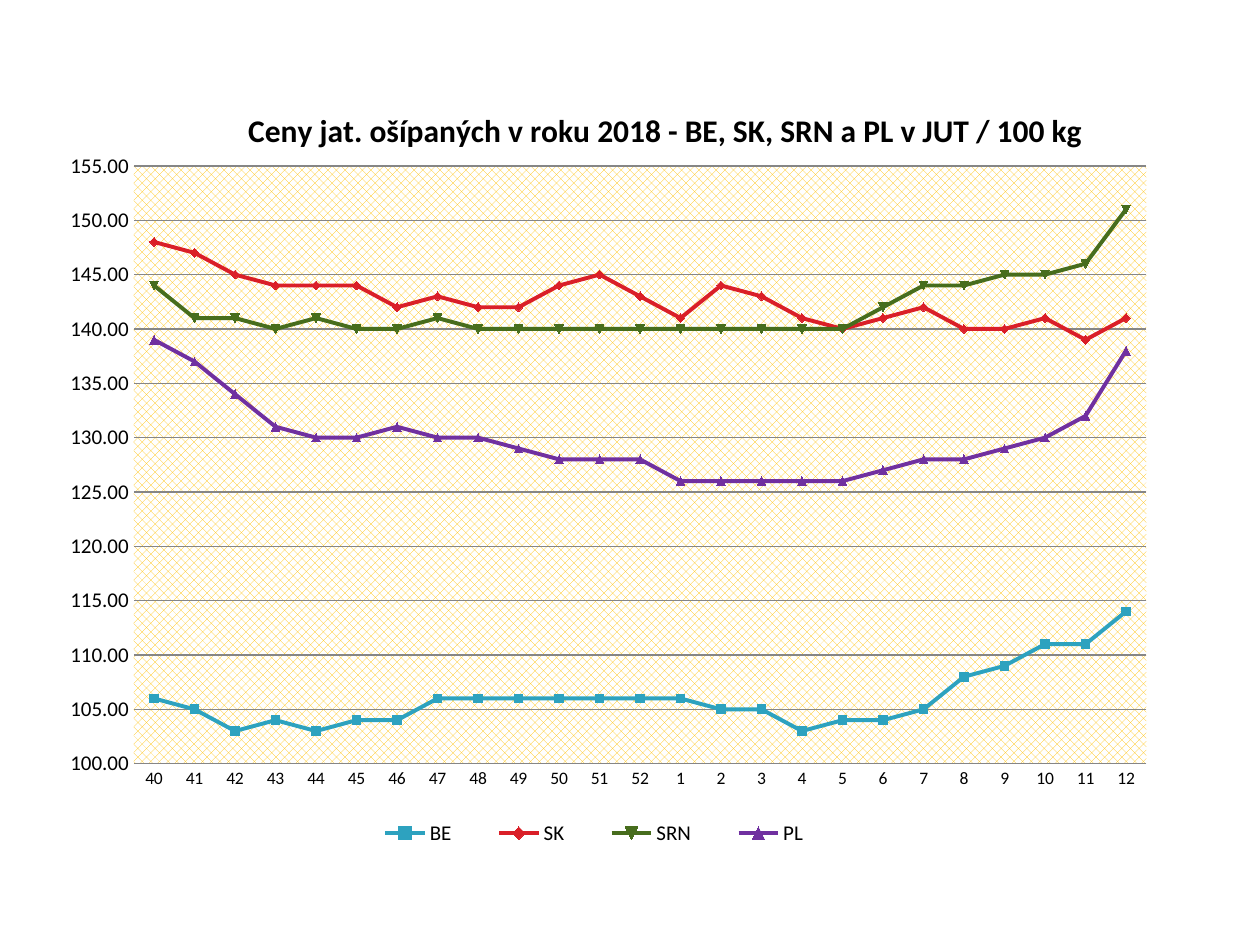
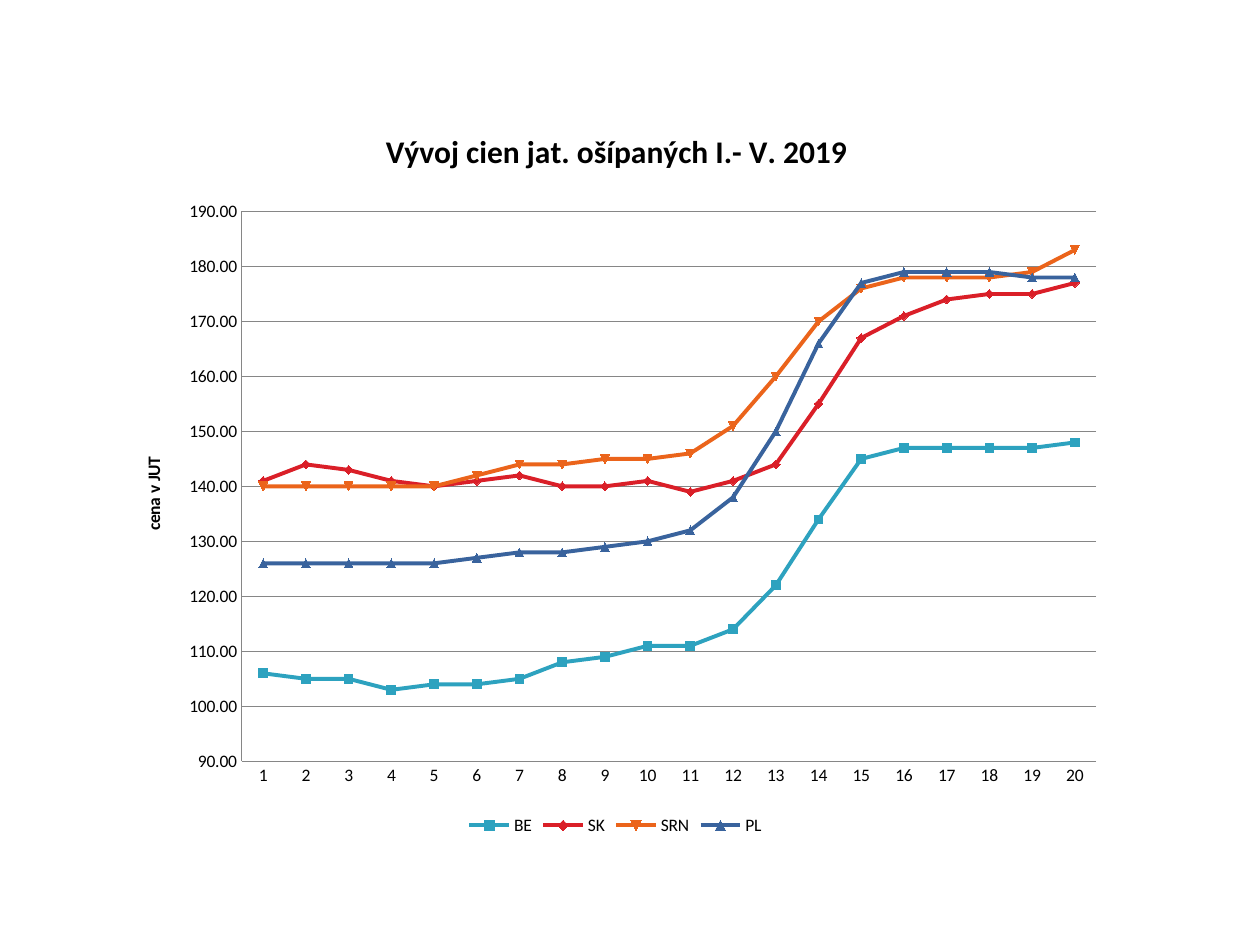
from dataclasses import dataclass

from pptx import Presentation
from pptx.chart.data import CategoryChartData
from pptx.dml.color import RGBColor
from pptx.enum.chart import XL_CHART_TYPE, XL_LEGEND_POSITION, XL_TICK_MARK
from pptx.oxml import parse_xml
from pptx.oxml.ns import nsdecls, qn
from pptx.util import Inches, Pt


@dataclass(frozen=True)
class Theme:
    """Colours, font and type sizes shared by both slides."""

    font: str = "Calibri"
    text: str = "000000"
    grid: str = "868686"
    teal: str = "2DA2BF"
    red: str = "DA1F28"
    green: str = "476D1D"
    purple: str = "7030A0"
    orange: str = "EB641B"
    blue: str = "39639D"
    hatch: str = "FFC000"
    paper: str = "FFFFFF"
    title_size: int = 18
    large_size: int = 12
    base_size: int = 10
    line_width: float = 2.25
    grid_width: float = 0.75
    marker_size: int = 5


THEME = Theme()

AUTUMN_WEEKS = range(40, 53)
SPRING_WEEKS = range(1, 13)
LATE_WEEKS = range(13, 21)

AUTUMN_PRICES = {
    "BE": [106, 105, 103, 104, 103, 104, 104, 106, 106, 106, 106, 106, 106],
    "SK": [148, 147, 145, 144, 144, 144, 142, 143, 142, 142, 144, 145, 143],
    "SRN": [144, 141, 141, 140, 141, 140, 140, 141, 140, 140, 140, 140, 140],
    "PL": [139, 137, 134, 131, 130, 130, 131, 130, 130, 129, 128, 128, 128],
}
SPRING_PRICES = {
    "BE": [106, 105, 105, 103, 104, 104, 105, 108, 109, 111, 111, 114],
    "SK": [141, 144, 143, 141, 140, 141, 142, 140, 140, 141, 139, 141],
    "SRN": [140, 140, 140, 140, 140, 142, 144, 144, 145, 145, 146, 151],
    "PL": [126, 126, 126, 126, 126, 127, 128, 128, 129, 130, 132, 138],
}
LATE_PRICES = {
    "BE": [122, 134, 145, 147, 147, 147, 147, 148],
    "SK": [144, 155, 167, 171, 174, 175, 175, 177],
    "SRN": [160, 170, 176, 178, 178, 178, 179, 183],
    "PL": [150, 166, 177, 179, 179, 179, 178, 178],
}


def join_periods(first, second):
    """Join the price lists of two periods country by country."""
    return {country: first[country] + second[country] for country in first}


def place(element, index, **percents):
    """Give a chart part a manual layout in percent of the chart."""
    for layout in element.findall(qn("c:layout")):
        element.remove(layout)
    target = '<c:layoutTarget val="inner"/>' if element.tag == qn("c:plotArea") else ""
    modes = "".join(f'<c:{axis}Mode val="edge"/>' for axis in "xy")
    values = "".join(f'<c:{key} val="{value / 100:.3f}"/>' for key, value in percents.items())
    element.insert(index, parse_xml(
        f'<c:layout {nsdecls("c")}><c:manualLayout>{target}{modes}{values}'
        "</c:manualLayout></c:layout>"))


class PriceDeck:
    """Holds the theme and the current slide and draws price charts."""

    def __init__(self, presentation, theme):
        self.presentation = presentation
        self.theme = theme
        self.slide = None

    def add_slide(self):
        """Start a new blank slide."""
        self.slide = self.presentation.slides.add_slide(self.presentation.slide_layouts[6])

    def style_font(self, font, size, bold=False):
        """Apply the theme font at the given size."""
        font.name = self.theme.font
        font.size = Pt(size)
        font.bold = bold
        font.color.rgb = RGBColor.from_string(self.theme.text)

    def style_line(self, line, color, width):
        """Set the colour and width of a line."""
        line.color.rgb = RGBColor.from_string(color)
        line.width = Pt(width)

    def add_title(self, owner, text, size):
        """Write a bold title on a chart or an axis title."""
        run = owner.text_frame.paragraphs[0].add_run()
        run.text = text
        self.style_font(run.font, size, True)

    def add_line_chart(self, title, title_place, box, weeks, prices, colors, plot, label_size):
        """Add a line chart with title, legend and coloured series."""
        data = CategoryChartData(number_format="#,##0.00")
        data.categories = [str(week) for week in weeks]
        for country, values in prices.items():
            data.add_series(country, values)
        frame = self.slide.shapes.add_chart(
            XL_CHART_TYPE.LINE_MARKERS, *(Inches(length) for length in box), data)
        chart = frame.chart
        self.style_font(chart.font, self.theme.base_size)
        chart.has_title = True
        self.add_title(chart.chart_title, title, self.theme.title_size)
        chart.chart_title.include_in_layout = False
        place(chart.chart_title.element, 1, **title_place)
        chart.has_legend = True
        chart.legend.position = XL_LEGEND_POSITION.BOTTOM
        chart.legend.include_in_layout = False
        self.style_font(chart.legend.font, label_size)
        chart.plots[0].vary_by_categories = False
        for series, color in zip(chart.plots[0].series, colors):
            self.style_series(series, color)
        place(chart.element.find(".//" + qn("c:plotArea")), 0, **plot)
        return chart

    def style_series(self, series, color):
        """Colour the line and the markers of one series."""
        series.smooth = False
        self.style_line(series.format.line, color, self.theme.line_width)
        series.marker.size = self.theme.marker_size
        series.marker.format.fill.solid()
        series.marker.format.fill.fore_color.rgb = RGBColor.from_string(color)
        self.style_line(series.marker.format.line, color, self.theme.grid_width)

    def style_axes(self, chart, minimum, maximum, step, label_size):
        """Set the scale, the grid and the labels of both axes."""
        for axis, size in ((chart.category_axis, self.theme.base_size),
                           (chart.value_axis, label_size)):
            axis.major_tick_mark = axis.minor_tick_mark = XL_TICK_MARK.NONE
            self.style_font(axis.tick_labels.font, size)
            self.style_line(axis.format.line, self.theme.grid, self.theme.grid_width)
        values = chart.value_axis
        values.minimum_scale, values.maximum_scale = minimum, maximum
        values.major_unit = step
        values.has_major_gridlines = True
        self.style_line(values.major_gridlines.format.line, self.theme.grid, self.theme.grid_width)
        values.tick_labels.number_format = "#,##0.00"
        values.tick_labels.number_format_is_linked = False

    def hatch_plot(self, chart):
        """Fill the plot area with the theme pattern."""
        chart.element.find(".//" + qn("c:plotArea")).append(parse_xml(
            f'<c:spPr {nsdecls("c", "a")}><a:pattFill prst="pct50">'
            f'<a:fgClr><a:srgbClr val="{self.theme.hatch}"/></a:fgClr>'
            f'<a:bgClr><a:srgbClr val="{self.theme.paper}"/></a:bgClr>'
            "</a:pattFill></c:spPr>"))


def add_yearly_prices(deck):
    """Build the slide with prices from week 40 to week 12."""
    theme = deck.theme
    deck.add_slide()
    chart = deck.add_line_chart(
        "Ceny jat. ošípaných v roku 2018 - BE, SK, SRN a PL v JUT / 100 kg",
        dict(x=17.7, y=0.9),
        (0.35, 0.76, 8.9, 6.06),
        [*AUTUMN_WEEKS, *SPRING_WEEKS],
        join_periods(AUTUMN_PRICES, SPRING_PRICES),
        (theme.teal, theme.red, theme.green, theme.purple),
        dict(x=8, y=9.2, w=90.3, h=78.3),
        theme.large_size)
    deck.style_axes(chart, 100, 155, 5, theme.large_size)
    chart.value_axis.format.line.fill.background()
    deck.hatch_plot(chart)
    place(chart.element.find(".//" + qn("c:legend")), 1, x=26.8, y=94.1, w=44.5, h=5)


def add_spring_prices(deck):
    """Build the slide with prices from week 1 to week 20."""
    theme = deck.theme
    deck.add_slide()
    chart = deck.add_line_chart(
        "Vývoj cien jat. ošípaných I.- V. 2019",
        dict(x=26.5, y=1.1),
        (0.91, 0.92, 7.95, 5.75),
        [*SPRING_WEEKS, *LATE_WEEKS],
        join_periods(SPRING_PRICES, LATE_PRICES),
        (theme.teal, theme.red, theme.orange, theme.blue),
        dict(x=12.7, y=13.2, w=85.3, h=75.9),
        theme.base_size)
    deck.style_axes(chart, 90, 190, 10, theme.base_size)
    deck.add_title(chart.value_axis.axis_title, "cena v JUT", theme.base_size)


def main():
    """Build both slides and save the presentation."""
    presentation = Presentation()
    presentation.slide_width = Inches(10)
    presentation.slide_height = Inches(7.5)
    deck = PriceDeck(presentation, THEME)
    add_yearly_prices(deck)
    add_spring_prices(deck)
    presentation.save("out.pptx")


if __name__ == "__main__":
    main()
